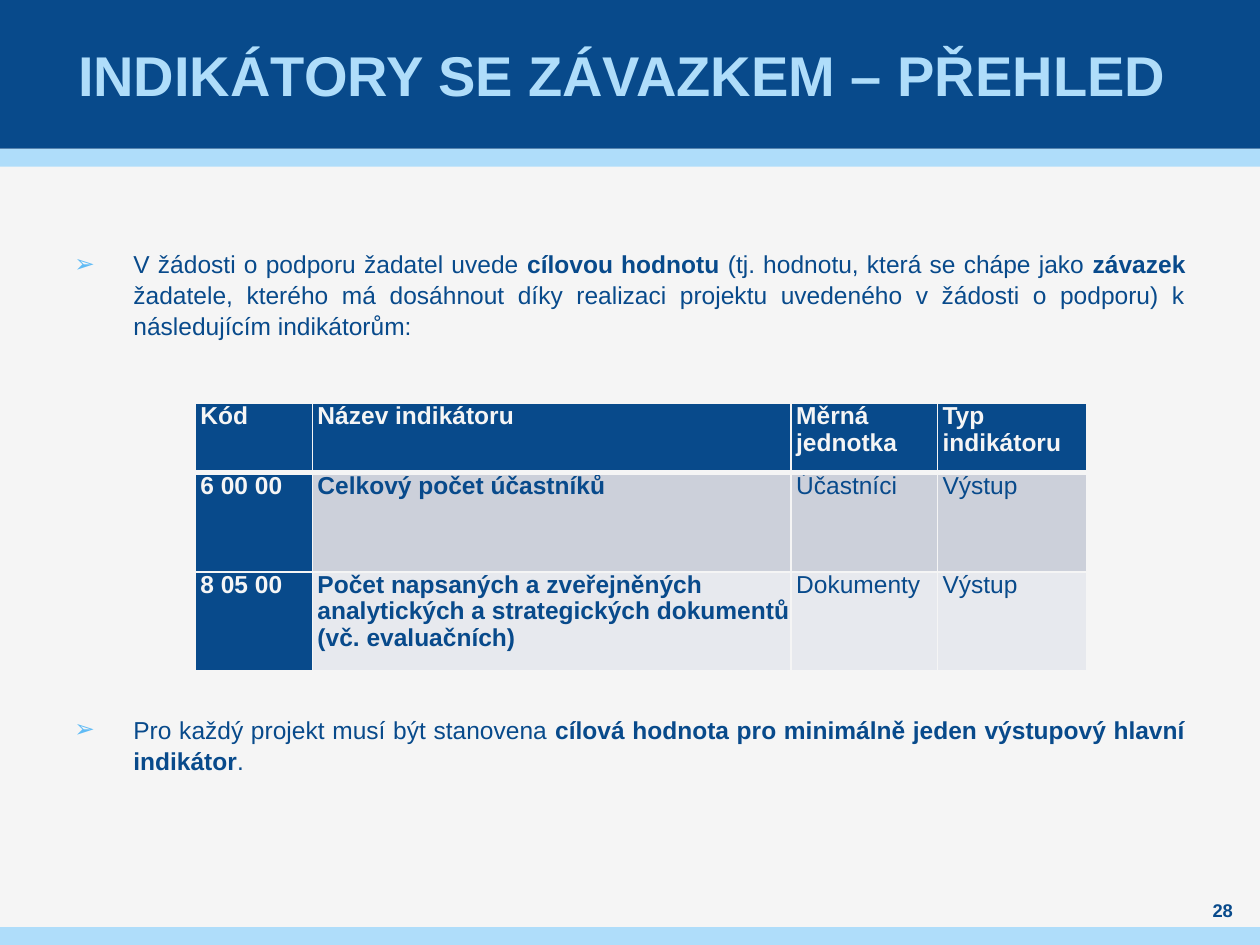
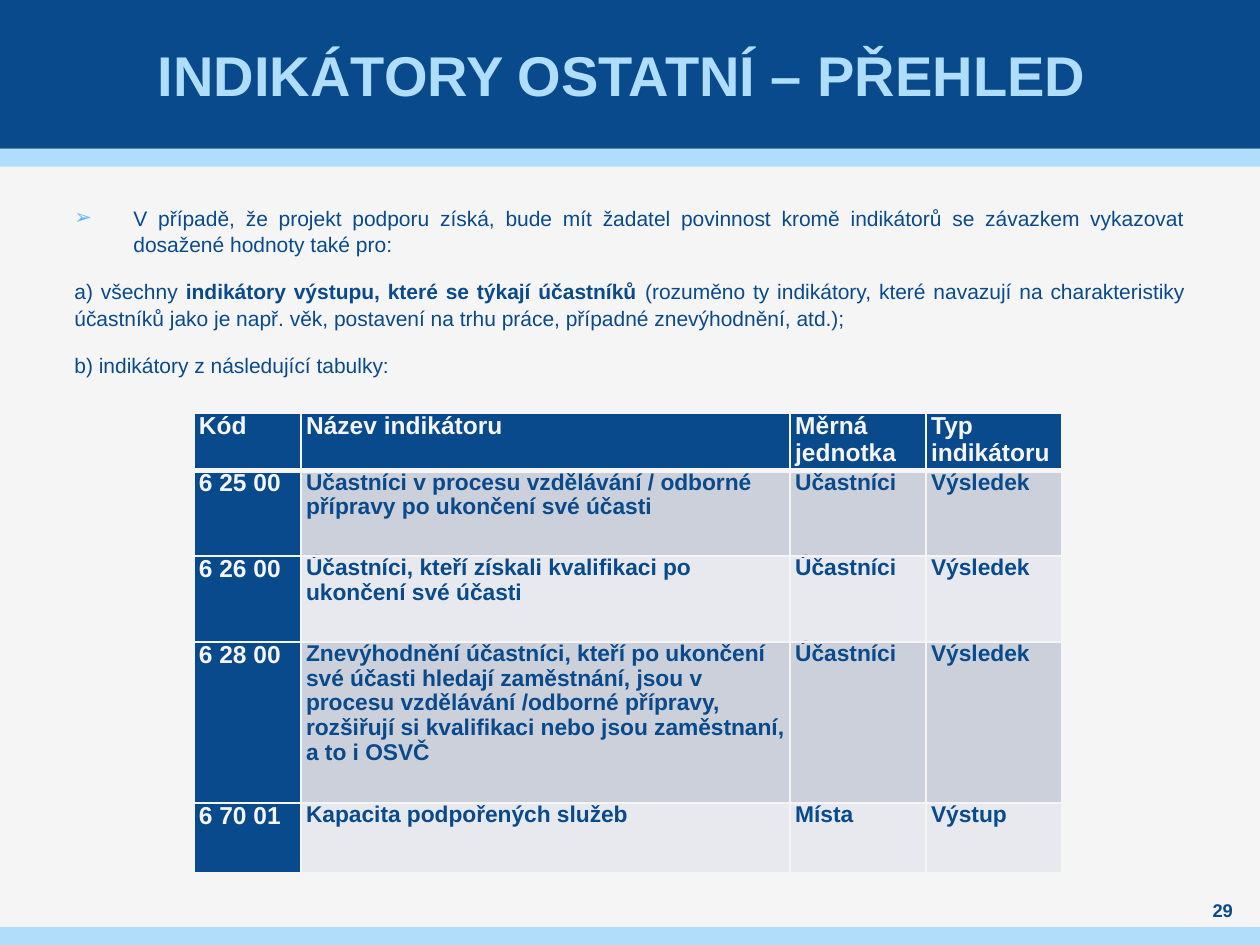
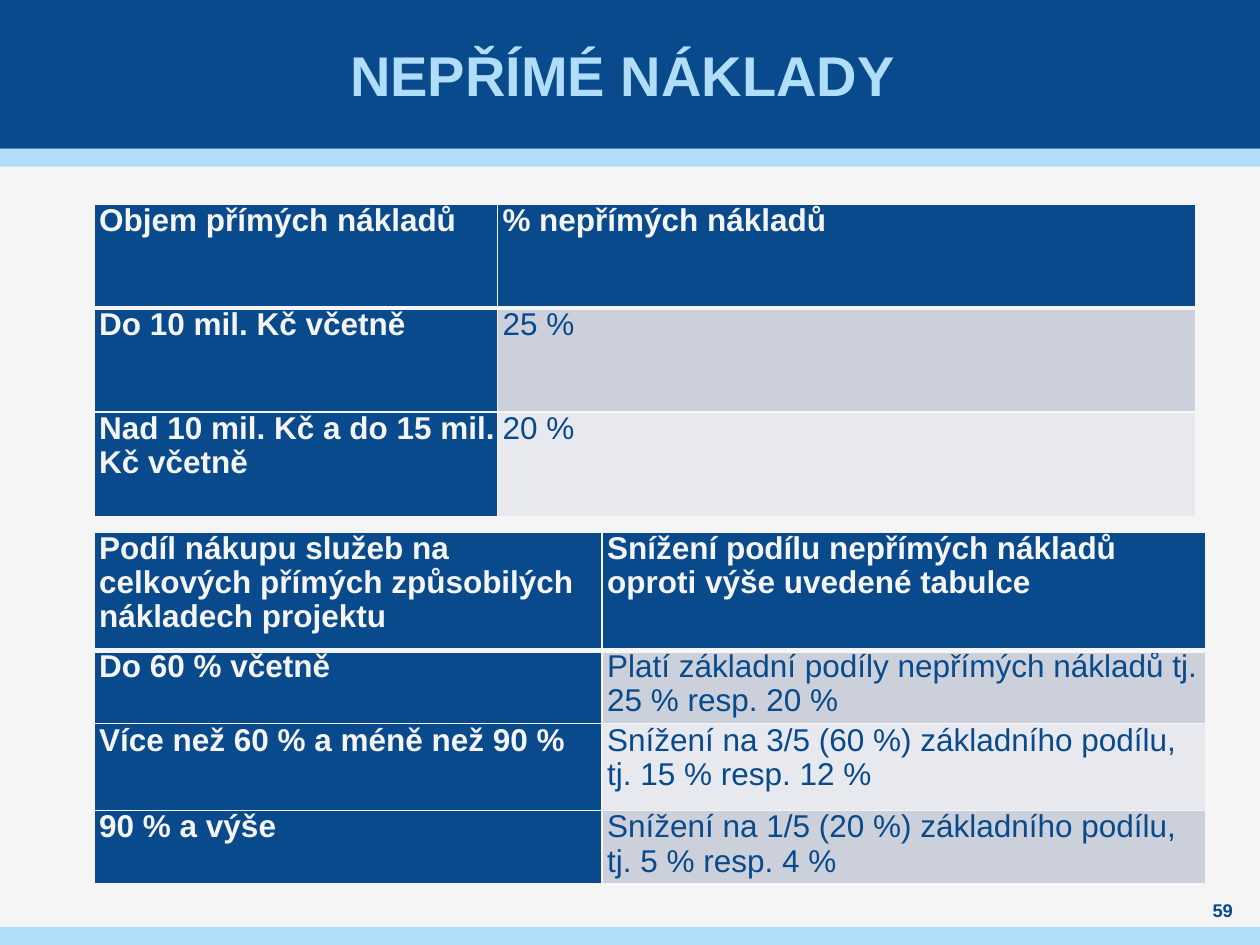
from lxml.etree import SubElement
from pptx import Presentation
from pptx.dml.color import RGBColor
from pptx.enum.shapes import MSO_SHAPE
from pptx.enum.text import MSO_ANCHOR, PP_ALIGN
from pptx.oxml.ns import qn
from pptx.util import Cm, Pt

COLORS = {
    "background": "F5F5F5",
    "navy": "084A8B",
    "sky": "AFDDFA",
    "bullet": "5FBBF5",
    "odd_row": "CCD0DA",
    "even_row": "E7E9EE",
}
FONT = "Arial"
WIDTH, HEIGHT = 25.4, 19.05
HEADER_HEIGHT, STRIPE_HEIGHT = 3.0, 0.36
BULLET_INDENT = 1.19
INDICATOR_HEADER = ["Kód", "Název indikátoru", "Měrná jednotka", "Typ indikátoru"]

# In a paragraph's "runs", every second string is bold.
# A table's "bold" and "sizes" give one value per column for the rows below the header.
SLIDES = [
    {
        "title": "INDIKÁTORY SE ZÁVAZKEM – PŘEHLED ",
        "number": "28",
        "body": {
            "top": 5.0, "height": 12.0, "size": 14,
            "paragraphs": [
                {"bullet": True, "before": 6, "runs": [
                    "V žádosti o podporu žadatel uvede ",
                    "cílovou hodnotu ",
                    "(tj. hodnotu, která se chápe jako ",
                    "závazek",
                    " žadatele, kterého má dosáhnout díky realizaci projektu uvedeného "
                    "v žádosti o podporu) k následujícím indikátorům:",
                ]},
                {"bullet": True, "before": 207, "runs": [
                    "Pro každý projekt musí být stanovena ",
                    "cílová hodnota pro minimálně jeden výstupový hlavní indikátor",
                    ".",
                ]},
            ],
        },
        "tables": [{
            "left": 3.94, "top": 8.13,
            "columns": [2.36, 9.65, 2.95, 3.0],
            "heights": [1.4, 2.0, 2.0],
            "header_size": 14,
            "sizes": [14, 14, 14, 14],
            "bold": [True, True, False, False],
            "rows": [
                INDICATOR_HEADER,
                ["6 00 00", "Celkový počet účastníků", "Účastníci", "Výstup"],
                ["8 05 00", "Počet napsaných a zveřejněných analytických a strategických "
                 "dokumentů (vč. evaluačních)", "Dokumenty", "Výstup"],
            ],
        }],
    },
    {
        "title": "INDIKÁTORY OSTATNÍ – PŘEHLED ",
        "number": "29",
        "body": {
            "top": 4.11, "height": 14.2, "size": 12,
            "paragraphs": [
                {"bullet": True, "before": 6, "runs": [
                    "V případě, že projekt podporu získá, bude mít žadatel povinnost kromě "
                    "indikátorů se závazkem vykazovat dosažené hodnoty také pro:",
                ]},
                {"bullet": False, "before": 6, "runs": [
                    "a) všechny ",
                    "indikátory výstupu, které se týkají účastníků ",
                    "(rozuměno ty indikátory, které navazují na charakteristiky účastníků "
                    "jako je např. věk, postavení na trhu práce, případné znevýhodnění, atd.);",
                ]},
                {"bullet": False, "before": 6, "runs": ["b) indikátory z následující tabulky:"]},
            ],
        },
        "tables": [{
            "left": 3.91, "top": 8.33,
            "columns": [2.16, 9.86, 2.74, 2.74],
            "heights": [1.09, 1.73, 1.73, 3.25, 1.4],
            "header_size": 14,
            "sizes": [14, 13, 13, 13],
            "bold": [True, True, True, True],
            "rows": [
                INDICATOR_HEADER,
                ["6 25 00", "Účastníci v procesu vzdělávání / odborné přípravy po ukončení "
                 "své účasti", "Účastníci", "Výsledek"],
                ["6 26 00", "Účastníci, kteří získali kvalifikaci po ukončení své účasti",
                 "Účastníci", "Výsledek"],
                ["6 28 00", "Znevýhodnění účastníci, kteří po ukončení své účasti hledají "
                 "zaměstnání, jsou v procesu vzdělávání /odborné přípravy, rozšiřují si "
                 "kvalifikaci nebo jsou zaměstnaní, a to i OSVČ", "Účastníci", "Výsledek"],
                ["6 70 01", "Kapacita podpořených služeb", "Místa", "Výstup"],
            ],
        }],
    },
    {
        "title": "NEPŘÍMÉ NÁKLADY ",
        "number": "59",
        "body": None,
        "tables": [
            {
                "left": 1.9, "top": 4.11,
                "columns": [8.13, 14.07],
                "heights": [2.1, 2.1, 2.1],
                "header_size": 18,
                "sizes": [18, 18],
                "bold": [True, False],
                "rows": [
                    ["Objem přímých nákladů", "% nepřímých nákladů"],
                    ["Do 10 mil. Kč včetně", "25 %"],
                    ["Nad 10 mil. Kč a do 15 mil. Kč včetně", "20 %"],
                ],
            },
            {
                "left": 1.9, "top": 10.72,
                "columns": [10.24, 12.17],
                "heights": [2.39, 1.14, 1.75, 1.19],
                "header_size": 18,
                "sizes": [18, 18],
                "bold": [True, False],
                "rows": [
                    ["Podíl nákupu služeb na celkových přímých způsobilých nákladech projektu",
                     "Snížení podílu nepřímých nákladů oproti výše uvedené tabulce"],
                    ["Do 60 % včetně",
                     "Platí základní podíly nepřímých nákladů tj. 25 % resp. 20 %"],
                    ["Více než 60 % a méně než 90 %",
                     "Snížení na 3/5 (60 %) základního podílu, tj. 15 % resp. 12 %"],
                    ["90 % a výše",
                     "Snížení na 1/5 (20 %) základního podílu, tj. 5 % resp. 4 %"],
                ],
            },
        ],
    },
]


def paint(fill, color):
    fill.solid()
    fill.fore_color.rgb = RGBColor.from_string(COLORS[color])


def style_span(span, size, color, bold):
    span.font.name = FONT
    span.font.size = Pt(size)
    span.font.bold = bold
    span.font.color.rgb = RGBColor.from_string(COLORS[color])


def add_band(page, top, height, color):
    band = page.shapes.add_shape(MSO_SHAPE.RECTANGLE, 0, Cm(top), Cm(WIDTH), Cm(height))
    band.shadow.inherit = False
    paint(band.fill, color)
    band.line.fill.background()


def add_text_frame(page, left, top, width, height, side_margin=0):
    box = page.shapes.add_textbox(Cm(left), Cm(top), Cm(width), Cm(height))
    frame = box.text_frame
    frame.word_wrap = True
    frame.margin_left = frame.margin_right = Cm(side_margin)
    frame.margin_top = frame.margin_bottom = 0
    return frame


def add_centred_line(page, text, place, size, color, side_margin=0):
    frame = add_text_frame(page, *place, side_margin)
    frame.vertical_anchor = MSO_ANCHOR.MIDDLE
    frame.text = text
    para = frame.paragraphs[0]
    para.alignment = PP_ALIGN.CENTER
    style_span(para.runs[0], size, color, True)


def add_bullet(para):
    properties = para._p.get_or_add_pPr()
    properties.set("marL", str(Cm(BULLET_INDENT)))
    properties.set("indent", str(-Cm(BULLET_INDENT)))
    color = SubElement(properties, qn("a:buClr"))
    SubElement(color, qn("a:srgbClr"), val=COLORS["bullet"])
    SubElement(properties, qn("a:buFont"), typeface=FONT)
    SubElement(properties, qn("a:buChar"), char="➢")


def add_body(page, body):
    frame = add_text_frame(page, 1.5, body["top"], 22.4, body["height"])
    for index, content in enumerate(body["paragraphs"]):
        para = frame.add_paragraph() if index else frame.paragraphs[0]
        para.alignment = PP_ALIGN.JUSTIFY
        para.line_spacing = 1.05
        para.space_before = Pt(content["before"])
        para.space_after = Pt(6)
        if content["bullet"]:
            add_bullet(para)
        for position, text in enumerate(content["runs"]):
            span = para.add_run()
            span.text = text
            style_span(span, body["size"], "navy", position % 2 == 1)


def add_borders(cell, top, bottom):
    """Draw the four cell borders; top and bottom are widths in points."""
    properties = cell._tc.get_or_add_tcPr()
    for side, width in (("L", 1), ("R", 1), ("T", top), ("B", bottom)):
        line = SubElement(properties, qn(f"a:ln{side}"), w=str(Pt(width)))
        fill = SubElement(line, qn("a:solidFill"))
        SubElement(fill, qn("a:srgbClr"), val=COLORS["background"])


def add_grid(page, content):
    columns, heights, rows = content["columns"], content["heights"], content["rows"]
    table = page.shapes.add_table(
        len(rows), len(columns), Cm(content["left"]), Cm(content["top"]),
        Cm(sum(columns)), Cm(sum(heights))).table
    table.first_col = True
    for column, width in zip(table.columns, columns):
        column.width = Cm(width)
    for row, height in zip(table.rows, heights):
        row.height = Cm(height)

    for r, texts in enumerate(rows):
        for c, text in enumerate(texts):
            cell = table.cell(r, c)
            cell.margin_left = Cm(0.1)
            cell.margin_right = cell.margin_top = cell.margin_bottom = 0
            add_borders(cell, 3 if r == 1 else 1, 3 if r == 0 else 1)
            heading = r == 0 or c == 0
            paint(cell.fill, "navy" if heading else "odd_row" if r % 2 else "even_row")
            cell.text_frame.text = text
            para = cell.text_frame.paragraphs[0]
            para.line_spacing = 0.97
            style_span(para.runs[0],
                       content["sizes"][c] if r else content["header_size"],
                       "background" if heading else "navy",
                       heading or content["bold"][c])


def add_page(deck, content):
    page = deck.slides.add_slide(deck.slide_layouts[6])
    paint(page.background.fill, "background")
    add_band(page, HEADER_HEIGHT, STRIPE_HEIGHT, "sky")
    add_band(page, 0, HEADER_HEIGHT, "navy")
    add_band(page, HEIGHT - STRIPE_HEIGHT, STRIPE_HEIGHT, "sky")
    add_centred_line(page, content["title"], (1.0, 0, 23.4, HEADER_HEIGHT), 32, "sky", 0.1)
    if content["body"]:
        add_body(page, content["body"])
    add_centred_line(page, content["number"], (24.0, 18.1, 1.3, 0.5), 10.5, "navy")
    for table in content["tables"]:
        add_grid(page, table)


def main():
    deck = Presentation()
    deck.slide_width, deck.slide_height = Cm(WIDTH), Cm(HEIGHT)
    for content in SLIDES:
        add_page(deck, content)
    deck.save("out.pptx")


if __name__ == "__main__":
    main()
